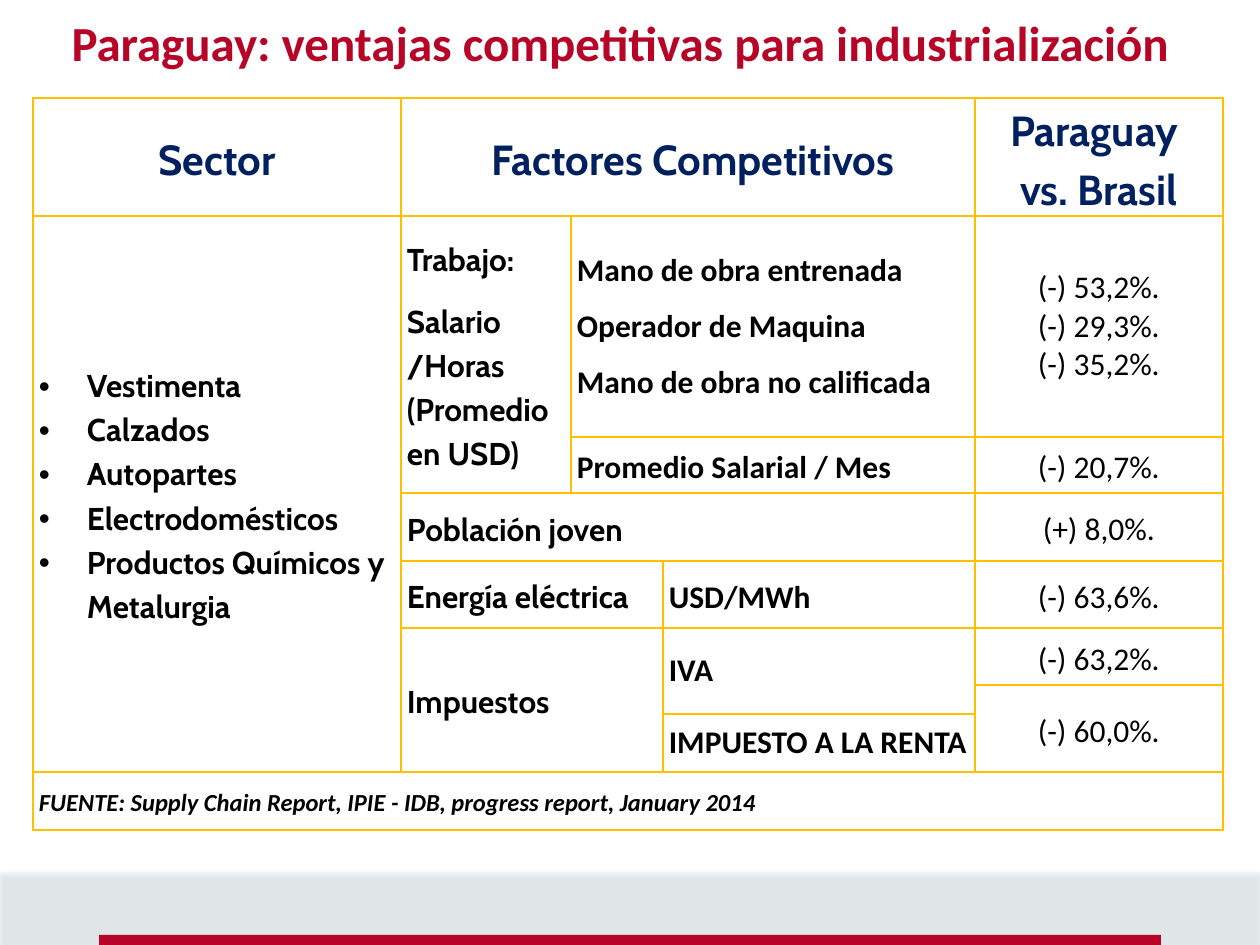
from dataclasses import dataclass

from lxml import etree
from pptx import Presentation
from pptx.dml.color import RGBColor
from pptx.enum.shapes import MSO_SHAPE
from pptx.enum.text import MSO_ANCHOR, PP_ALIGN
from pptx.oxml.ns import qn
from pptx.util import Pt

CENTER, LEFT = PP_ALIGN.CENTER, PP_ALIGN.LEFT
MIDDLE, RECTANGLE = MSO_ANCHOR.MIDDLE, MSO_SHAPE.RECTANGLE


@dataclass(frozen=True)
class Theme:
    red: str = "B60527"
    navy: str = "002060"
    black: str = "000000"
    gold: str = "FFC000"
    mist: str = "DBEEF4"
    heading: str = "Cabin"
    body: str = "Calibri"
    title_size: int = 28
    header_size: int = 24
    body_size: int = 18
    source_size: int = 14
    thin: float = 1
    thick: float = 1.5


THEME = Theme()
PX_PER_INCH = 126
SLIDE = (1260, 945)
HANG = 48
CELL_MARGIN = 6

TITLE = "Paraguay: ventajas competitivas para industrialización"
TITLE_BOX = (40, 6, 1160, 80)
FOOTER_BAND = (0, 872, 1260, 73)
FOOTER_BAR = (99, 935, 1062, 31)

TABLE_ORIGIN = (33, 98)
COLUMNS = [368, 170, 92, 312, 248]
ROWS = [118, 221, 56, 68, 67, 57, 29, 58, 58]
THICK_LINES = {0, 1, 8}  # horizontal grid lines, counted from the table's top

BASE = dict(font=THEME.body, size=THEME.body_size, color=THEME.black, bold=True,
            italic=False, align=LEFT, spacing=1.15, after=0, hang=0, bullet=None)
STYLES = {
    "title": dict(size=THEME.title_size, color=THEME.red, align=CENTER, spacing=1.0),
    "header": dict(font=THEME.heading, size=THEME.header_size, color=THEME.navy, align=CENTER),
    "sector": dict(font=THEME.heading, hang=HANG, bullet="•"),
    "factor": dict(font=THEME.heading, after=10),
    "detail": dict(after=10),
    "job": dict(after=10, spacing=1.0),
    "tax": dict(spacing=1.0),
    "value": dict(bold=False, align=CENTER, hang=HANG),
    "values": dict(bold=False, align=CENTER, hang=HANG, spacing=1.0),
    "source": dict(size=THEME.source_size, italic=True, hang=HANG),
}

# row, column, rows spanned, columns spanned, style, paragraphs
CELLS = [
    (0, 0, 1, 1, "header", ["Sector"]),
    (0, 1, 1, 3, "header", [" Factores Competitivos"]),
    (0, 4, 1, 1, "header", ["Paraguay ", "vs. Brasil"]),
    (1, 0, 7, 1, "sector", ["Vestimenta", "Calzados", "Autopartes", "Electrodomésticos",
                            "Productos Químicos y Metalurgia"]),
    (1, 1, 2, 1, "factor", ["Trabajo:", "Salario /Horas (Promedio en USD)"]),
    (1, 2, 1, 2, "job", ["Mano de obra entrenada", "Operador de Maquina",
                         "Mano de obra no calificada"]),
    (1, 4, 1, 1, "values", ["(-) 53,2%.", "(-) 29,3%.", "(-) 35,2%."]),
    (2, 2, 1, 2, "detail", ["Promedio Salarial / Mes"]),
    (2, 4, 1, 1, "value", ["(-) 20,7%."]),
    (3, 1, 1, 3, "factor", ["Población joven"]),
    (3, 4, 1, 1, "value", ["(+) 8,0%."]),
    (4, 1, 1, 2, "factor", ["Energía eléctrica"]),
    (4, 3, 1, 1, "detail", ["USD/MWh"]),
    (4, 4, 1, 1, "value", ["(-) 63,6%."]),
    (5, 1, 3, 2, "factor", ["Impuestos"]),
    (5, 3, 2, 1, "tax", ["IVA"]),
    (5, 4, 1, 1, "value", ["(-) 63,2%."]),
    (6, 4, 2, 1, "value", ["(-) 60,0%."]),
    (7, 3, 1, 1, "tax", ["IMPUESTO A LA RENTA"]),
    (8, 0, 1, 5, "source", ["FUENTE: Supply Chain Report, IPIE - IDB, progress report, January 2014"]),
]


def px(length):
    return round(length * 914400 / PX_PER_INCH)


def box(lengths):
    return [px(length) for length in lengths]


def add_element(parent, tag, **attributes):
    values = {key: str(value) for key, value in attributes.items()}
    return etree.SubElement(parent, qn(tag), values)


def write(frame, style_name, lines):
    style = BASE | STYLES[style_name]
    for index, line in enumerate(lines):
        paragraph = frame.paragraphs[0] if index == 0 else frame.add_paragraph()
        paragraph_format = dict(alignment=style["align"], line_spacing=style["spacing"],
                                space_after=Pt(style["after"]))
        for name, value in paragraph_format.items():
            setattr(paragraph, name, value)
        properties = paragraph._p.get_or_add_pPr()
        if style["hang"]:
            properties.set("marL", str(px(style["hang"])))
            properties.set("indent", str(-px(style["hang"])))
        if style["bullet"]:
            add_element(properties, "a:buFont", typeface="Arial")
            add_element(properties, "a:buChar", char=style["bullet"])
        run = paragraph.add_run()
        run.text = line
        run_format = dict(name=style["font"], size=Pt(style["size"]),
                          bold=style["bold"], italic=style["italic"])
        for name, value in run_format.items():
            setattr(run.font, name, value)
        run.font.color.rgb = RGBColor.from_string(style["color"])


def add_border(cell, side, width):
    line = add_element(cell._tc.get_or_add_tcPr(), f"a:ln{side}", w=Pt(width))
    fill = add_element(line, "a:solidFill")
    add_element(fill, "a:srgbClr", val=THEME.gold)


def outline_span(table, top, left, height, width):
    """Give every cell of a span the borders of the whole span."""
    bottom, right = top + height, left + width
    upright = {side: THEME.thick if top == 0 and 0 < line < len(COLUMNS) else THEME.thin
               for side, line in (("L", left), ("R", right))}
    level = {side: THEME.thick if line in THICK_LINES else THEME.thin
             for side, line in (("T", top), ("B", bottom))}
    for row in range(top, bottom):
        for column in range(left, right):
            cell = table.cell(row, column)
            for side, weight in (upright | level).items():
                add_border(cell, side, weight)
            cell.fill.background()


def add_factor_table(slide):
    frame = slide.shapes.add_table(len(ROWS), len(COLUMNS),
                                   *box((*TABLE_ORIGIN, sum(COLUMNS), sum(ROWS))))
    table = frame.table
    table.first_row = table.horz_banding = False
    for column, width in zip(table.columns, COLUMNS):
        column.width = px(width)
    for row, height in zip(table.rows, ROWS):
        row.height = px(height)
    cell_format = dict(vertical_anchor=MIDDLE, margin_left=px(CELL_MARGIN),
                       margin_right=px(CELL_MARGIN), margin_top=0, margin_bottom=0)
    for top, left, height, width, style_name, lines in CELLS:
        cell = table.cell(top, left)
        if height * width > 1:
            cell.merge(table.cell(top + height - 1, left + width - 1))
        for name, value in cell_format.items():
            setattr(cell, name, value)
        write(cell.text_frame, style_name, lines)
        outline_span(table, top, left, height, width)


def add_bar(slide, place, color):
    bar = slide.shapes.add_shape(RECTANGLE, *box(place))
    bar.shadow.inherit = False
    bar.fill.solid()
    bar.fill.fore_color.rgb = RGBColor.from_string(color)
    bar.line.fill.background()
    return bar


def add_footer(slide):
    properties = add_bar(slide, FOOTER_BAND, THEME.mist)._element.spPr
    tint = properties.find(qn("a:solidFill")).find(qn("a:srgbClr"))
    add_element(tint, "a:alpha", val=32000)
    shadow = add_element(properties.find(qn("a:effectLst")), "a:outerShdw",
                         blurRad=Pt(3.1), dist=Pt(1.8), dir=5400000, rotWithShape=0)
    shade = add_element(shadow, "a:srgbClr", val=THEME.black)
    add_element(shade, "a:alpha", val=35000)
    add_bar(slide, FOOTER_BAR, THEME.red)


def main():
    deck = Presentation()
    deck.slide_width, deck.slide_height = box(SLIDE)
    slide = deck.slides.add_slide(deck.slide_layouts[6])
    add_footer(slide)
    add_factor_table(slide)
    title = slide.shapes.add_textbox(*box(TITLE_BOX)).text_frame
    title.word_wrap = False
    write(title, "title", [TITLE])
    deck.save("out.pptx")


if __name__ == "__main__":
    main()
